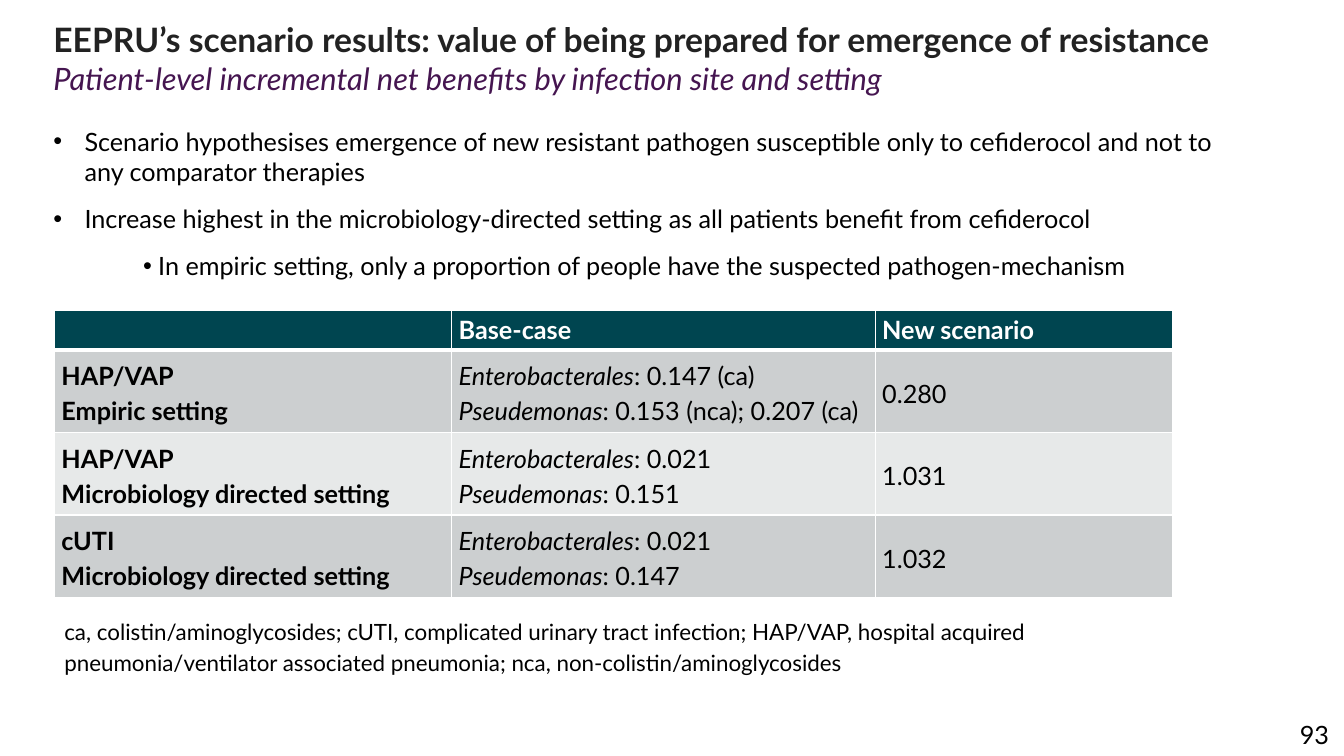
from lxml import etree
from pptx import Presentation
from pptx.dml.color import RGBColor
from pptx.enum.text import MSO_ANCHOR, MSO_AUTO_SIZE, PP_ALIGN
from pptx.oxml.ns import qn
from pptx.util import Inches, Pt

FONT = "Lato"
COLORS = {
    "title": "222222", "subtitle": "451550", "text": "000000",
    "white": "FFFFFF", "header": "004550", "dark": "CCCFD0", "light": "E7E9E9",
}


def add_run(p, text, size=18, color="text", bold=False, italic=False):
    r = p.add_run()
    r.text = text
    font = r.font
    font.name, font.size, font.bold, font.italic = FONT, Pt(size), bold, italic
    font.color.rgb = RGBColor.from_string(COLORS[color])


def add_textbox(slide, left, top, width, height):
    sp = slide.shapes.add_textbox(Inches(left), Inches(top), Inches(width), Inches(height))
    sp.text_frame.word_wrap = True
    return sp.text_frame


def add_title(slide, left, top, width, height, title, subtitle):
    sp = slide.shapes.title
    sp.left, sp.top, sp.width, sp.height = map(Inches, (left, top, width, height))
    tf = sp.text_frame
    tf.auto_size = MSO_AUTO_SIZE.NONE
    tf.vertical_anchor = MSO_ANCHOR.TOP
    p = tf.paragraphs[0]
    p.alignment = PP_ALIGN.LEFT
    p.space_before = Pt(6)
    add_run(p, title, 24, "title", bold=True)
    p.add_line_break()
    add_run(p, subtitle, 22, "subtitle", italic=True)


def add_bullets(slide, left, top, width, height, items):
    tf = add_textbox(slide, left, top, width, height)
    for i, (level, text) in enumerate(items):
        p = tf.add_paragraph() if i else tf.paragraphs[0]
        p.level = level
        p.space_before = p.space_after = Pt(6)
        margin, indent = (0.89, 0) if level else (0.31, -0.31)
        pPr = p._p.get_or_add_pPr()
        pPr.set("marL", str(Inches(margin)))
        pPr.set("indent", str(Inches(indent)))
        etree.SubElement(pPr, qn("a:buFont"), typeface="Arial")
        etree.SubElement(pPr, qn("a:buChar"), char="•")
        add_run(p, text)


def set_borders(cell, **widths):
    """Draw white borders, given as side=points in the order L, R, T, B."""
    tcPr = cell._tc.get_or_add_tcPr()
    for i, (side, width) in enumerate(widths.items()):
        ln = etree.Element(qn(f"a:ln{side}"), w=str(Pt(width)))
        fill = etree.SubElement(ln, qn("a:solidFill"))
        etree.SubElement(fill, qn("a:srgbClr"), val=COLORS["white"])
        tcPr.insert(i, ln)


def fill_cell(cell, lines, fill, color="text"):
    """Each line is a list of (text, style) runs."""
    cell.margin_left = cell.margin_right = Inches(0.07)
    cell.margin_top = cell.margin_bottom = 0
    cell.fill.solid()
    cell.fill.fore_color.rgb = RGBColor.from_string(COLORS[fill])
    tf = cell.text_frame
    for i, runs in enumerate(lines):
        p = tf.add_paragraph() if i else tf.paragraphs[0]
        p.line_spacing = 1.15
        for text, style in runs:
            add_run(p, text, color=color, **style)


def add_results_table(slide, left, top, col_widths, row_heights, headers, results):
    table = slide.shapes.add_table(
        len(row_heights), len(col_widths), Inches(left), Inches(top),
        Inches(sum(col_widths)), Inches(sum(row_heights))).table
    for col, width in zip(table.columns, col_widths):
        col.width = Inches(width)
    for row, height in zip(table.rows, row_heights):
        row.height = Inches(height)

    # Header row
    bold, italic = {"bold": True}, {"italic": True}
    for c, text in enumerate(headers):
        lines = [[(text, bold)]] if text else []
        fill_cell(table.cell(0, c), lines, "header", "white")
        set_borders(table.cell(0, c), L=1, R=1, T=1, B=3)

    # One banded row per infection site and setting
    for r, (site, setting, entero, pseudo, scenario) in enumerate(results, 1):
        row_lines = (
            [[(site, bold)], [(setting, bold)]],
            [[("Enterobacterales", italic), (f": {entero}", {})],
             [("Pseudemonas", italic), (f": {pseudo}", {})]],
            [[(scenario, {})]],
        )
        for c, lines in enumerate(row_lines):
            cell = table.cell(r, c)
            cell.vertical_anchor = MSO_ANCHOR.MIDDLE
            fill_cell(cell, lines, "dark" if r % 2 else "light")
            set_borders(cell, L=1, R=1, T=3 if r == 1 else 1, B=1)


def add_footnote(slide, left, top, width, height, text):
    p = add_textbox(slide, left, top, width, height).paragraphs[0]
    p.line_spacing = 1.15
    add_run(p, text, 16)


def add_page_number(slide, left, top, width, height, number):
    p = add_textbox(slide, left, top, width, height).paragraphs[0]
    p.alignment = PP_ALIGN.RIGHT
    add_run(p, number)


def main():
    prs = Presentation()
    prs.slide_width, prs.slide_height = Inches(13.33), Inches(7.5)
    slide = prs.slides.add_slide(prs.slide_layouts[5])

    add_page_number(slide, 11.44, 7.09, 1.84, 0.4, "93")
    add_title(
        slide, 0.43, 0.14, 12.36, 1.4,
        "EEPRU’s scenario results: value of being prepared for emergence of resistance",
        "Patient-level incremental net benefits by infection site and setting")
    add_results_table(
        slide, 0.54, 3.08, (3.94, 4.2, 2.95), (0.39, 0.82, 0.82, 0.82),
        ("", "Base-case", "New scenario"),
        [("HAP/VAP", "Empiric setting", "0.147 (ca)", "0.153 (nca); 0.207 (ca)", "0.280"),
         ("HAP/VAP", "Microbiology directed setting", "0.021", "0.151", "1.031"),
         ("cUTI", "Microbiology directed setting", "0.021", "0.147", "1.032")])
    add_bullets(slide, 0.43, 1.2, 12.12, 1.95, [
        (0, "Scenario hypothesises emergence of new resistant pathogen susceptible only to "
            "cefiderocol and not to any comparator therapies"),
        (0, "Increase highest in the microbiology-directed setting as all patients benefit "
            "from cefiderocol"),
        (2, " In empiric setting, only a proportion of people have the suspected "
            "pathogen-mechanism"),
    ])
    add_footnote(
        slide, 0.54, 6.04, 11.2, 0.69,
        "ca, colistin/aminoglycosides; cUTI, complicated urinary tract infection; HAP/VAP, "
        "hospital acquired pneumonia/ventilator associated pneumonia; nca, "
        "non-colistin/aminoglycosides")

    prs.save("out.pptx")


if __name__ == "__main__":
    main()
